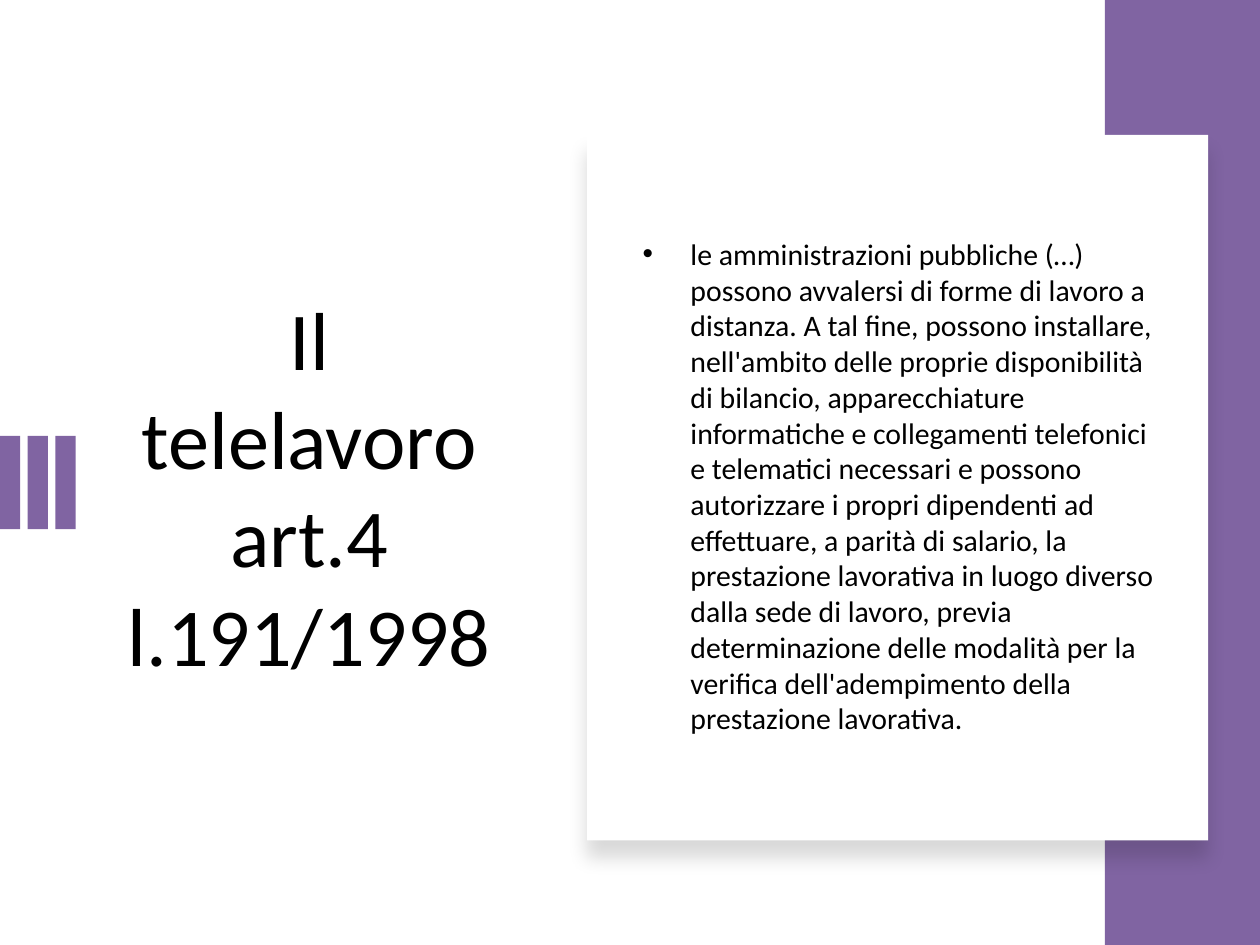
from pptx import Presentation
from pptx.dml.color import RGBColor as RGB
from pptx.enum.shapes import MSO_SHAPE as SHAPE
from pptx.enum.text import MSO_ANCHOR as ANCHOR, MSO_AUTO_SIZE as AUTO, PP_ALIGN as ALIGN
from pptx.oxml import parse_xml
from pptx.oxml.ns import nsdecls
from pptx.util import Inches, Pt

COLORS = {"accent": "8064A2", "card": "FFFFFF", "text": "000000", "shadow": "000000"}

TITLE = "Il telelavoro\vart.4 l.191/1998"
BODY = (
    "le amministrazioni pubbliche (…) possono avvalersi di forme di lavoro a distanza. "
    "A tal fine, possono installare, nell'ambito delle proprie disponibilità di bilancio, "
    "apparecchiature informatiche e collegamenti telefonici e telematici necessari e possono "
    "autorizzare i propri dipendenti ad effettuare, a parità di salario, la prestazione "
    "lavorativa in luogo diverso dalla sede di lavoro, previa determinazione delle modalità "
    "per la verifica dell'adempimento della prestazione lavorativa."
)


class SlideBuilder:
    font = "Calibri"

    def __init__(self, prs):
        self.slide = prs.slides.add_slide(prs.slide_layouts[1])
        self.shapes = self.slide.shapes

    def rect(self, box, color, parent=None):
        shapes = parent.shapes if parent else self.shapes
        sp = shapes.add_shape(SHAPE.RECTANGLE, *map(Inches, box))
        sp.shadow.inherit = False
        sp.fill.solid()
        sp.fill.fore_color.rgb = RGB.from_string(COLORS[color])
        sp.line.fill.background()
        return sp

    def bars(self, count, left, top, width, height, step):
        group = self.shapes.add_group_shape()
        for i in range(count):
            self.rect((left + i * step, top, width, height), "accent", group)

    def card(self, box):
        sp = self.rect(box, "card")
        effects = sp._element.spPr.find("{*}effectLst")
        effects.append(parse_xml(
            f'<a:outerShdw {nsdecls("a")} blurRad="{Pt(11)}" dist="{Pt(10)}" dir="5400000" '
            f'algn="t" rotWithShape="0"><a:srgbClr val="{COLORS["shadow"]}">'
            '<a:alpha val="15000"/></a:srgbClr></a:outerShdw>'
        ))

    def placeholder(self, sp, box, text, size, align, bullet=False):
        sp.left, sp.top, sp.width, sp.height = map(Inches, box)
        self.shapes._spTree.append(sp._element)
        tf = sp.text_frame
        frame = {"word_wrap": True, "auto_size": AUTO.NONE, "vertical_anchor": ANCHOR.MIDDLE}
        for name, value in frame.items():
            setattr(tf, name, value)
        tf.text = text
        p = tf.paragraphs[0]
        p.alignment = align
        p.space_before = Pt(0)
        if bullet:
            pPr = p._p.get_or_add_pPr()
            pPr.set("marL", str(Inches(0.38)))
            pPr.set("indent", str(-Inches(0.38)))
            pPr.append(parse_xml(f'<a:buFont {nsdecls("a")} typeface="Arial"/>'))
            pPr.append(parse_xml(f'<a:buChar {nsdecls("a")} char="•"/>'))
        for r in p.runs:
            for name, value in {"name": self.font, "size": Pt(size)}.items():
                setattr(r.font, name, value)
            r.font.color.rgb = RGB.from_string(COLORS["text"])


def main():
    prs = Presentation()
    prs.slide_width, prs.slide_height = Inches(10), Inches(7.5)
    s = SlideBuilder(prs)
    title, body = s.slide.placeholders
    s.placeholder(title, (0.86, 1.46, 3.19, 4.79), TITLE, 47, ALIGN.CENTER)
    s.bars(3, left=0, top=3.46, width=0.16, height=0.74, step=0.22)
    s.rect((8.77, 0, 1.23, 7.5), "accent")
    s.card((4.66, 1.07, 4.93, 5.6))
    s.placeholder(body, (5, 1.46, 4.32, 4.79), BODY, 17, ALIGN.LEFT, bullet=True)
    prs.save("out.pptx")


if __name__ == "__main__":
    main()
